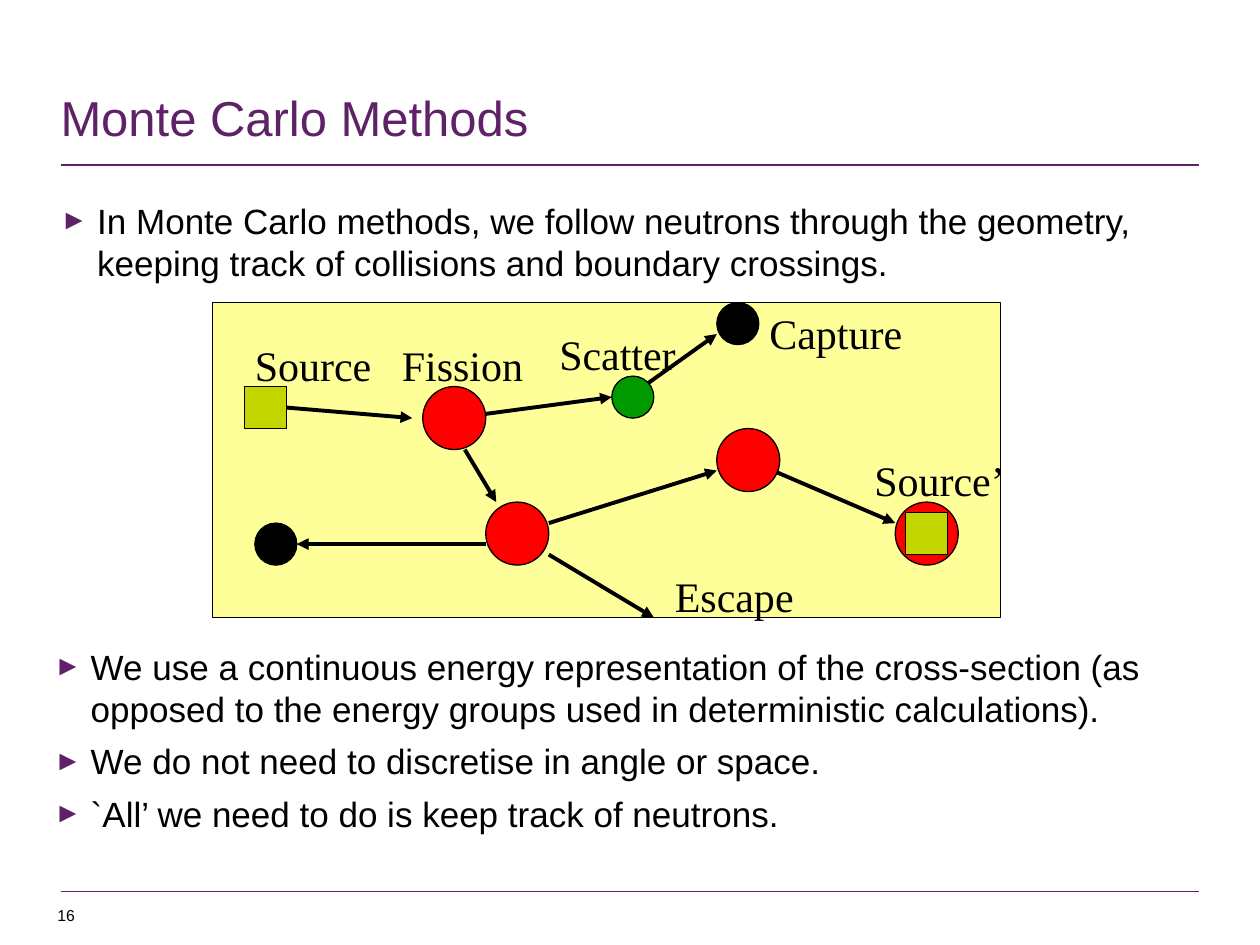
from lxml.etree import SubElement
from pptx import Presentation
from pptx.dml.color import RGBColor
from pptx.enum.shapes import MSO_CONNECTOR, MSO_SHAPE
from pptx.enum.text import MSO_ANCHOR as ANCHOR, MSO_AUTO_SIZE as AUTO, PP_ALIGN
from pptx.oxml.ns import qn
from pptx.util import Cm, Pt

COLORS = dict(purple="5F2167", black="000000", cream="FFFF99", red="FF0000",
              lime="C4D600", green="009900")

# Content
TITLE = "Monte Carlo Methods"
INTRO = ["In Monte Carlo methods, we follow neutrons through the geometry, "
         "keeping track of collisions and boundary crossings."]
POINTS = [
    "We use a continuous energy representation of the cross-section (as opposed "
    "to the energy groups used in deterministic calculations).",
    "We do not need to discretise in angle or space.",
    "`All’ we need to do is keep track of neutrons.",
]
PAGE = "16"

# Diagram, in grid units from the top left corner of its frame
UNIT = 2.54 / 12
LEFT, TOP = 4.29, 6.1
FRAME = (0, 0, 75, 30)
OVAL, RECT = MSO_SHAPE.OVAL, MSO_SHAPE.RECTANGLE
# shape, colour, x, y, size
SOURCE = (RECT, "lime", 3, 8, 4)
BACK_NODES = [(OVAL, "red", 26, 19, 6), (OVAL, "red", 65, 19, 6),
              (RECT, "lime", 66, 20, 4)]
FRONT_NODES = [(OVAL, "green", 38, 7, 4), (OVAL, "black", 4, 21, 4),
               (OVAL, "black", 48, 0, 4), (OVAL, "red", 20, 8, 6),
               (OVAL, "red", 48, 12, 6)]
# x1, y1, x2, y2
FIRST_FLIGHT = (7, 10, 19, 11)
FLIGHTS = [(24, 14, 27, 19), (32, 21, 48, 16), (51, 15, 65, 21), (26, 23, 8, 23),
           (23, 11, 38, 9), (41, 8, 48, 3), (32, 24, 42, 30)]
# text, x, y, width
LABELS = [("Source", 4, 3, 13), ("Fission", 18, 3, 13), ("Scatter", 33, 2, 13),
          ("Capture", 53, 0, 20), ("Escape", 44, 25, 20), ("Source’", 63, 14, 15)]
LABEL_HEIGHT = 4.8


def rgb(name):
    return RGBColor.from_string(COLORS[name])


def grid(x, y):
    return Cm(LEFT + x * UNIT), Cm(TOP + y * UNIT)


def size(n):
    return Cm(n * UNIT)


def add_bullet(p):
    pPr = p._p.get_or_add_pPr()
    pPr.set("marL", str(Cm(0.74)))
    pPr.set("indent", str(-Cm(0.74)))
    color = SubElement(pPr, qn("a:buClr"))
    SubElement(color, qn("a:srgbClr"), val=COLORS["purple"])
    SubElement(pPr, qn("a:buSzPct"), val="80000")
    SubElement(pPr, qn("a:buFont"), typeface="Arial")
    SubElement(pPr, qn("a:buChar"), char="►")


def write(sp, lines, font="Arial", pt=20, color="black", bullets=False, after=0,
          spacing=None, anchor=ANCHOR.TOP, insets=(0.25, 0.13, 0.25, 0.13)):
    tf = sp.text_frame
    tf.word_wrap, tf.auto_size, tf.vertical_anchor = True, AUTO.NONE, anchor
    tf.margin_left, tf.margin_top, tf.margin_right, tf.margin_bottom = map(Cm, insets)
    for i, line in enumerate(lines):
        p = tf.add_paragraph() if i else tf.paragraphs[0]
        if bullets:
            add_bullet(p)
        p.alignment = PP_ALIGN.LEFT
        p.space_before, p.space_after = Pt(0), Pt(after)
        if spacing:
            p.line_spacing = spacing
        r = p.add_run()
        r.text = line
        r.font.name, r.font.size = font, Pt(pt)
        r.font.color.rgb = rgb(color)


def add_line(start, end, color, width, arrow=False):
    line = shapes.add_connector(MSO_CONNECTOR.STRAIGHT, *start, *end)
    line.line.color.rgb, line.line.width = rgb(color), Pt(width)
    if arrow:
        SubElement(line.line._get_or_add_ln(), qn("a:tailEnd"), type="triangle")
    SubElement(line._element.spPr, qn("a:effectLst"))
    return line


def add_block(kind, color, x, y, w, h=None):
    s = shapes.add_shape(kind, *grid(x, y), size(w), size(h or w))
    s.shadow.inherit = False
    s.fill.solid()
    s.fill.fore_color.rgb = rgb(color)
    s.line.color.rgb, s.line.width = rgb("black"), Pt(0.75)
    return s


def add_flight(x1, y1, x2, y2):
    return add_line(grid(x1, y1), grid(x2, y2), "black", 2.25, arrow=True)


prs = Presentation()
prs.slide_width, prs.slide_height = Cm(25.4), Cm(19.05)
slide = prs.slides.add_slide(prs.slide_layouts[5])
shapes = slide.shapes

# Rules, title and page number
for y in (3.32, 17.97):
    add_line((Cm(1.22), Cm(y)), (Cm(24.18), Cm(y)), "purple", 1)
title = shapes.title
title.left, title.top, title.width, title.height = map(Cm, (1.22, 0.25, 20.45, 2.84))
write(title, [TITLE], pt=28, color="purple", spacing=0.9, anchor=ANCHOR.BOTTOM,
      insets=(0, 0.13, 0, 0.13))
write(shapes.add_textbox(Cm(0.91), Cm(18.14), Cm(5.72), Cm(0.64)), [PAGE], pt=9,
      anchor=ANCHOR.MIDDLE)

# Bulleted text
write(shapes.add_textbox(Cm(1.22), Cm(3.89), Cm(22.91), Cm(2.06)), INTRO,
      bullets=True, after=6, insets=(0, 0.13, 0, 0.13))
write(shapes.add_textbox(Cm(0.84), Cm(12.88), Cm(23.34), Cm(4.11)), POINTS,
      bullets=True, after=6)

# Neutron diagram
add_block(RECT, "cream", *FRAME)
for node in BACK_NODES:
    add_block(*node)
source = add_block(*SOURCE)
add_flight(*FIRST_FLIGHT).begin_connect(source, 3)
for flight in FLIGHTS:
    add_flight(*flight)
for node in FRONT_NODES:
    add_block(*node)
for text, x, y, w in LABELS:
    box = shapes.add_textbox(*grid(x, y), size(w), size(LABEL_HEIGHT))
    write(box, [text], font="Times New Roman", pt=24, insets=(0, 0.1, 0.25, 0))

prs.save("out.pptx")
